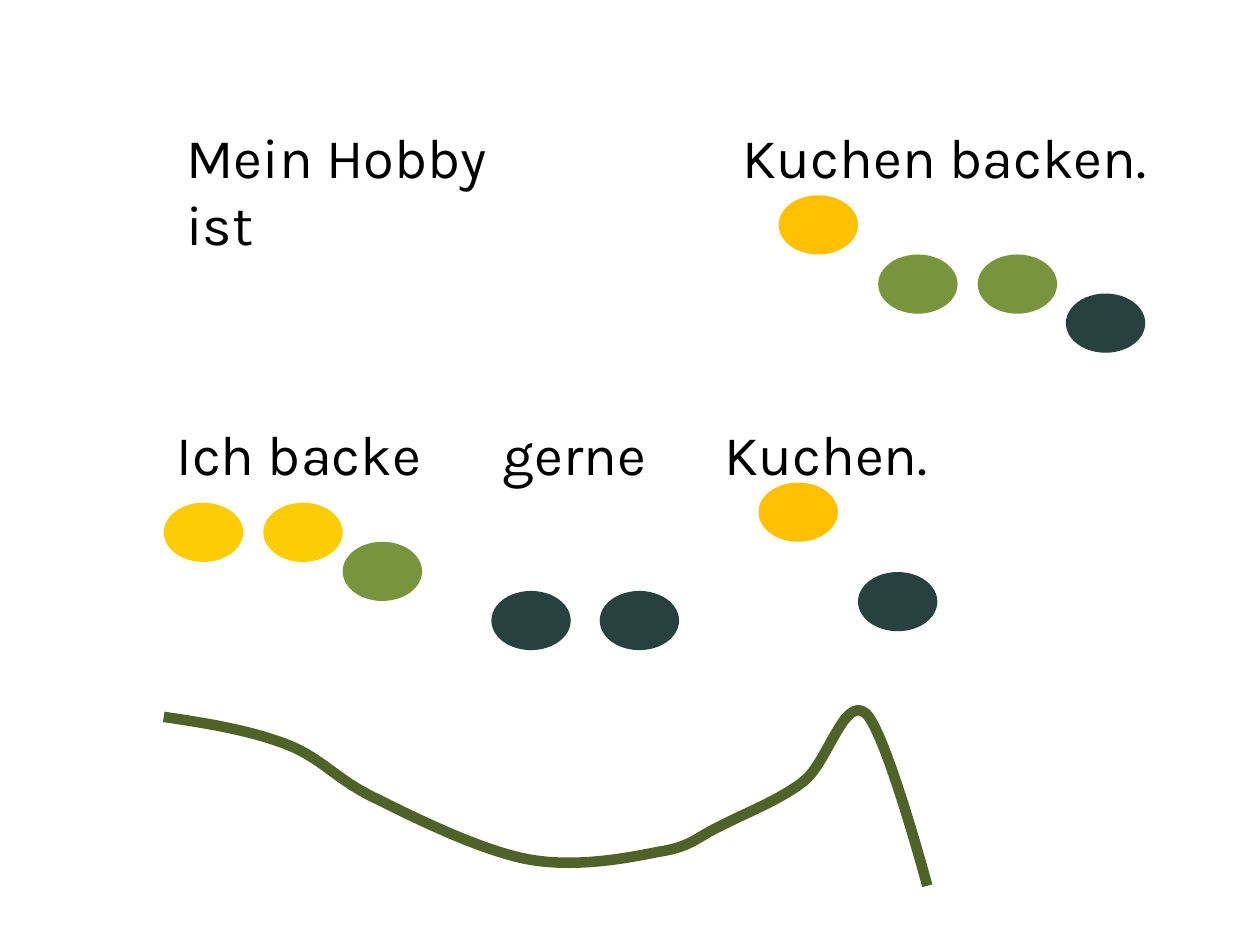
from lxml import etree
from pptx import Presentation
from pptx.dml.color import RGBColor
from pptx.enum import shapes, text
from pptx.oxml import ns
from pptx.util import Inches, Pt

BLACK = RGBColor(0x00, 0x00, 0x00)
AMBER = RGBColor(0xFF, 0xC0, 0x00)
YELLOW = RGBColor(0xFC, 0xCD, 0x04)
GREEN = RGBColor(0x78, 0x95, 0x3D)
TEAL = RGBColor(0x27, 0x41, 0x3F)
OLIVE = RGBColor(0x4F, 0x62, 0x28)

FONT = "Karla"
DOT_WIDTH, DOT_HEIGHT = 0.63, 0.47

HOBBY_DOTS = [
    (1.65, 0.63, AMBER), (2.44, 1.1, GREEN),
    (3.23, 1.1, GREEN), (3.93, 1.41, TEAL),
]
BAKING_DOTS = [
    (0.71, 0.71, YELLOW), (1.5, 0.71, YELLOW), (2.13, 1.02, GREEN),
    (3.31, 1.41, TEAL), (4.17, 1.41, TEAL),
    (5.43, 0.55, AMBER), (6.22, 1.26, TEAL),
]
MELODY_START = (0, 0.17)
MELODY_CURVES = [
    (0.35, 0.22), (0.7, 0.28), (0.98, 0.39),
    (1.26, 0.5), (1.37, 0.67), (1.69, 0.82),
    (2.01, 0.98), (2.52, 1.23), (2.89, 1.3),
    (3.27, 1.37), (3.68, 1.29), (3.93, 1.24),
    (4.19, 1.2), (4.22, 1.13), (4.41, 1.04),
    (4.6, 0.94), (4.89, 0.83), (5.08, 0.68),
    (5.27, 0.53), (5.4, 0, ), (5.57, 0.14),
    (5.73, 0.28), (6.06, 1.51), (6.06, 1.51),
]


def add_sentence(slide, left, top, width, wording,
                 alignment=text.PP_ALIGN.LEFT, indent=0.1, tab_stops=()):
    shape = slide.shapes.add_textbox(
        Inches(left), Inches(top), Inches(width), Inches(0.64))
    frame = shape.text_frame
    frame.word_wrap = True
    frame.margin_left = Inches(indent)
    frame.text = wording
    paragraph = frame.paragraphs[0]
    paragraph.alignment = alignment
    paragraph.space_after = Pt(12)
    if tab_stops:
        properties = paragraph._p.get_or_add_pPr()
        tab_list = etree.SubElement(properties, ns.qn("a:tabLst"))
        for position in tab_stops:
            etree.SubElement(tab_list, ns.qn("a:tab"),
                             pos=str(Inches(position)), algn="l")
    for run in paragraph.runs:
        run.font.name = FONT
        run.font.size = Pt(32)
        run.font.color.rgb = BLACK


def add_dots(slide, left, top, dots):
    for x, y, color in dots:
        shape = slide.shapes.add_shape(
            shapes.MSO_SHAPE.OVAL, Inches(left + x), Inches(top + y),
            Inches(DOT_WIDTH), Inches(DOT_HEIGHT))
        shape.shadow.inherit = False
        shape.fill.solid()
        shape.fill.fore_color.rgb = color
        shape.line.fill.background()


def add_hobby_sentence(slide, left, top, width):
    add_sentence(slide, left, top, 3.17, "Mein Hobby ist")
    ending_left = left + 3.15
    add_sentence(slide, ending_left, top, left + width - ending_left,
                 "Kuchen backen.", text.PP_ALIGN.RIGHT)
    add_dots(slide, ending_left, top, HOBBY_DOTS)


def add_baking_sentence(slide, left, top, width):
    add_sentence(slide, left, top, width, "Ich backe\tgerne\tKuchen.",
                 indent=0.81, tab_stops=(2.59, 4.35))
    add_dots(slide, left, top, BAKING_DOTS)


def add_melody_line(slide, left, top):
    start_x, start_y = MELODY_START
    builder = slide.shapes.build_freeform(
        Inches(start_x), Inches(start_y), scale=1.0)
    builder.add_line_segments(
        [(Inches(x), Inches(y)) for x, y in MELODY_CURVES], close=False)
    shape = builder.convert_to_shape(Inches(left), Inches(top))
    outline = shape._element.find(".//" + ns.qn("a:path"))
    segments = outline.findall(ns.qn("a:lnTo"))
    for index in range(0, len(segments), 3):
        curve = etree.SubElement(outline, ns.qn("a:cubicBezTo"))
        for segment in segments[index:index + 3]:
            curve.append(segment[0])
            outline.remove(segment)
    shape.shadow.inherit = False
    shape.fill.background()
    shape.line.color.rgb = OLIVE
    shape.line.width = Pt(6)


def main():
    presentation = Presentation()
    presentation.slide_width = Inches(10)
    presentation.slide_height = Inches(7.5)
    slide = presentation.slides.add_slide(presentation.slide_layouts[6])
    add_hobby_sentence(slide, 1.38, 0.92, 7.82)
    add_baking_sentence(slide, 0.59, 3.28, 7.64)
    add_melody_line(slide, 1.3, 5.52)
    presentation.save("out.pptx")


if __name__ == "__main__":
    main()
